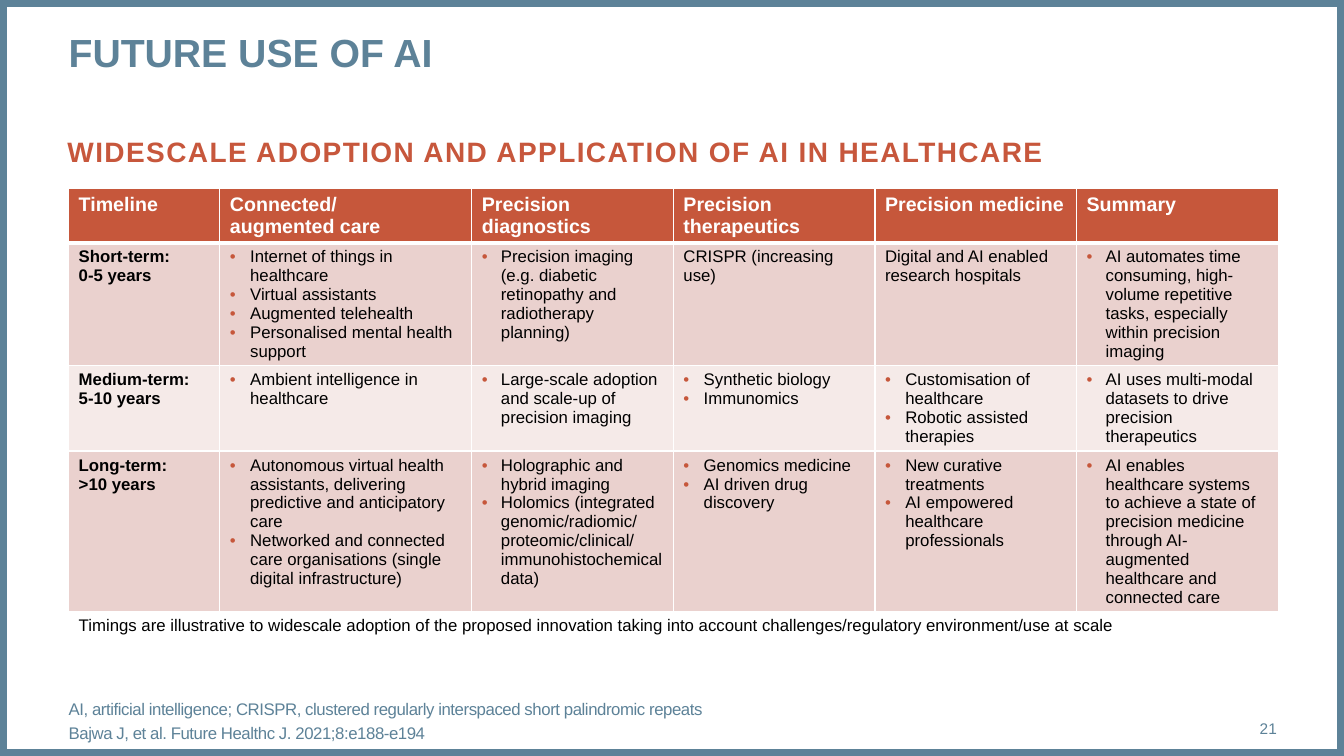
import pptx
import pptx.dml.color
import pptx.enum.shapes
import pptx.enum.text
import pptx.oxml.ns
import pptx.util
from lxml import etree

Cm = pptx.util.Cm
Pt = pptx.util.Pt
RGBColor = pptx.dml.color.RGBColor
ANCHOR = pptx.enum.text.MSO_ANCHOR
ALIGN = pptx.enum.text.PP_ALIGN
qn = pptx.oxml.ns.qn

STEEL = RGBColor(0x5D, 0x82, 0x98)
RUST = RGBColor(0xC7, 0x57, 0x3C)
HEADER_RUST = RGBColor(0xC6, 0x57, 0x3B)
ROSE = RGBColor(0xEA, 0xD1, 0xCE)
PALE_ROSE = RGBColor(0xF5, 0xEA, 0xE8)
WHITE = RGBColor(0xFF, 0xFF, 0xFF)
BLACK = RGBColor(0, 0, 0)

COLUMN_WIDTHS = (3.81, 6.35, 5.08, 5.08, 5.08, 5.08)
ROW_HEIGHT = 1.04
WIDE_INDENT, NARROW_INDENT = 0.51, 0.48
NARROW_COLUMNS = (2, 5)

HEADINGS = ("Timeline", "Connected/\naugmented care", "Precision diagnostics",
            "Precision therapeutics", "Precision medicine", "Summary")
STAGES = (
    ("Short-term:\n0-5 years",
     ["Internet of things in healthcare", "Virtual assistants",
      "Augmented telehealth", "Personalised mental health support"],
     ["Precision imaging \n(e.g. diabetic retinopathy and radiotherapy planning)"],
     "CRISPR (increasing use)",
     "Digital and AI enabled research hospitals",
     ["AI automates time consuming, high-volume repetitive tasks, "
      "especially within precision imaging"]),
    ("Medium-term:\n5-10 years",
     ["Ambient intelligence in healthcare"],
     ["Large-scale adoption and scale-up of precision imaging"],
     ["Synthetic biology", "Immunomics"],
     ["Customisation of healthcare", "Robotic assisted therapies"],
     ["AI uses multi-modal datasets to drive precision therapeutics"]),
    ("Long-term:\n>10 years",
     ["Autonomous virtual health assistants, delivering predictive and anticipatory care",
      "Networked and connected care organisations (single digital infrastructure)"],
     ["Holographic and hybrid imaging",
      "Holomics (integrated genomic/radiomic/\nproteomic/clinical/\nimmunohistochemical data)"],
     ["Genomics medicine", "AI driven drug discovery"],
     ["New curative treatments", "AI empowered healthcare professionals"],
     ["AI enables healthcare systems to achieve a state of precision medicine "
      "through AI-augmented healthcare and connected care"]),
)
TIMING_NOTE = ("Timings are illustrative to widescale adoption of the proposed innovation "
               "taking into account challenges/regulatory environment/use at scale")
FOOTNOTES = (
    "AI, artificial intelligence; CRISPR, clustered regularly interspaced short palindromic repeats",
    "Bajwa J, et al. Future Healthc J. 2021;8:e188-e194",
)


def write(frame, lines, *, size, color, bold=False, align=ALIGN.LEFT,
          gap=0, spacing=0, indent=None):
    for number, line in enumerate(lines):
        paragraph = frame.add_paragraph() if number else frame.paragraphs[0]
        paragraph.text = line
        paragraph.alignment = align
        paragraph.space_before = Pt(gap if number else 0)
        properties = paragraph._p.get_or_add_pPr()
        properties.set("marL", str(Cm(indent or 0)))
        properties.set("indent", str(-Cm(indent or 0)))
        if indent:
            bullet_color = etree.SubElement(properties, qn("a:buClr"))
            etree.SubElement(bullet_color, qn("a:srgbClr"), val=str(HEADER_RUST))
            etree.SubElement(properties, qn("a:buFont"), typeface="Arial")
            etree.SubElement(properties, qn("a:buChar"), char="•")
        else:
            etree.SubElement(properties, qn("a:buNone"))
        for line_break in paragraph._p.findall(qn("a:br")):
            etree.SubElement(line_break, qn("a:rPr"), sz=str(size * 100))
        for run in paragraph.runs:
            run.font.name = "Arial"
            run.font.size = Pt(size)
            run.font.bold = bold
            run.font.color.rgb = color
            if spacing:
                run._r.get_or_add_rPr().set("spc", str(round(spacing * 100)))


def place_text(holder, box, lines, anchor=ANCHOR.TOP, **text_format):
    holder.left, holder.top, holder.width, holder.height = map(Cm, box)
    frame = holder.text_frame
    frame.word_wrap = True
    frame.auto_size = pptx.enum.text.MSO_AUTO_SIZE.NONE
    frame.vertical_anchor = anchor
    frame.margin_left = frame.margin_right = 0
    frame.margin_top = frame.margin_bottom = 0
    write(frame, lines, **text_format)


def draw_border(slide, box):
    border = slide.shapes.add_shape(pptx.enum.shapes.MSO_SHAPE.RECTANGLE, *map(Cm, box))
    border.shadow.inherit = False
    border.fill.background()
    border.line.color.rgb = STEEL
    border.line.width = Pt(10)


def draw_headings(slide, box):
    left, top, width = box
    title, subtitle = slide.shapes.title, slide.placeholders[1]
    place_text(title, (left, top, width, 2.39), ["FUTURE USE OF AI"],
               size=28, color=STEEL, bold=True)
    place_text(subtitle, (left - 0.03, top + 2.67, width, 1.96),
               ["WIDESCALE ADOPTION AND APPLICATION OF AI IN HEALTHCARE"],
               size=20, color=RUST, bold=True, spacing=1)


def style_cell(cell, fill=None, bottom_width=1):
    properties = cell._tc.get_or_add_tcPr()
    for side, width in (("L", 1), ("R", 1), ("T", 1), ("B", bottom_width)):
        edge = etree.SubElement(properties, qn(f"a:ln{side}"), w=str(Pt(width)))
        paint = etree.SubElement(edge, qn("a:solidFill"))
        etree.SubElement(paint, qn("a:srgbClr"), val=str(WHITE))
    if fill is None:
        cell.fill.background()
    else:
        cell.fill.solid()
        cell.fill.fore_color.rgb = fill


def draw_timeline_table(slide, box):
    timeline_frame = slide.shapes.add_table(len(STAGES) + 2, len(HEADINGS), *map(Cm, box))
    timeline = timeline_frame.table
    for column, width in zip(timeline.columns, COLUMN_WIDTHS):
        column.width = Cm(width)
    for row in timeline.rows:
        row.height = Cm(ROW_HEIGHT)
    timeline_frame.height = Cm(box[3])

    for column, heading in enumerate(HEADINGS):
        cell = timeline.cell(0, column)
        style_cell(cell, HEADER_RUST, bottom_width=3)
        write(cell.text_frame, [heading], size=14, color=WHITE, bold=True)

    for row, stage in enumerate(STAGES, 1):
        for column, content in enumerate(stage):
            cell = timeline.cell(row, column)
            style_cell(cell, ROSE if row % 2 else PALE_ROSE)
            bulleted = isinstance(content, list)
            indent = NARROW_INDENT if column in NARROW_COLUMNS else WIDE_INDENT
            write(cell.text_frame, content if bulleted else [content], size=12,
                  color=BLACK, bold=column == 0, indent=indent if bulleted else None)

    note_row = len(STAGES) + 1
    note = timeline.cell(note_row, 0)
    note.merge(timeline.cell(note_row, len(HEADINGS) - 1))
    for column in range(len(HEADINGS)):
        style_cell(timeline.cell(note_row, column))
    write(note.text_frame, [TIMING_NOTE], size=12, color=BLACK)


def draw_footer(slide, box):
    left, top, width, height = box
    number_width = 2.18
    notes_width = width - number_width
    place_text(slide.placeholders[2], (left, top, notes_width, height), FOOTNOTES,
               anchor=ANCHOR.MIDDLE, size=12, color=STEEL, gap=3, spacing=-0.3)
    page_number = slide.shapes.add_textbox(0, 0, 0, 0)
    place_text(page_number, (left + notes_width, top + 0.2, number_width, height), ["21"],
               anchor=ANCHOR.MIDDLE, size=11, color=STEEL, align=ALIGN.RIGHT)


def main():
    deck = pptx.Presentation()
    deck.slide_width, deck.slide_height = Cm(33.87), Cm(19.05)
    slide = deck.slides.add_slide(deck.slide_layouts.get_by_name("Two Content"))
    draw_border(slide, (0, 0, 33.87, 19.05))
    draw_headings(slide, (1.73, 0.71, 30.45))
    draw_timeline_table(slide, (1.73, 4.75, 30.48, 11.86))
    draw_footer(slide, (1.73, 17.65, 30.45, 1.02))
    deck.save("out.pptx")


if __name__ == "__main__":
    main()
